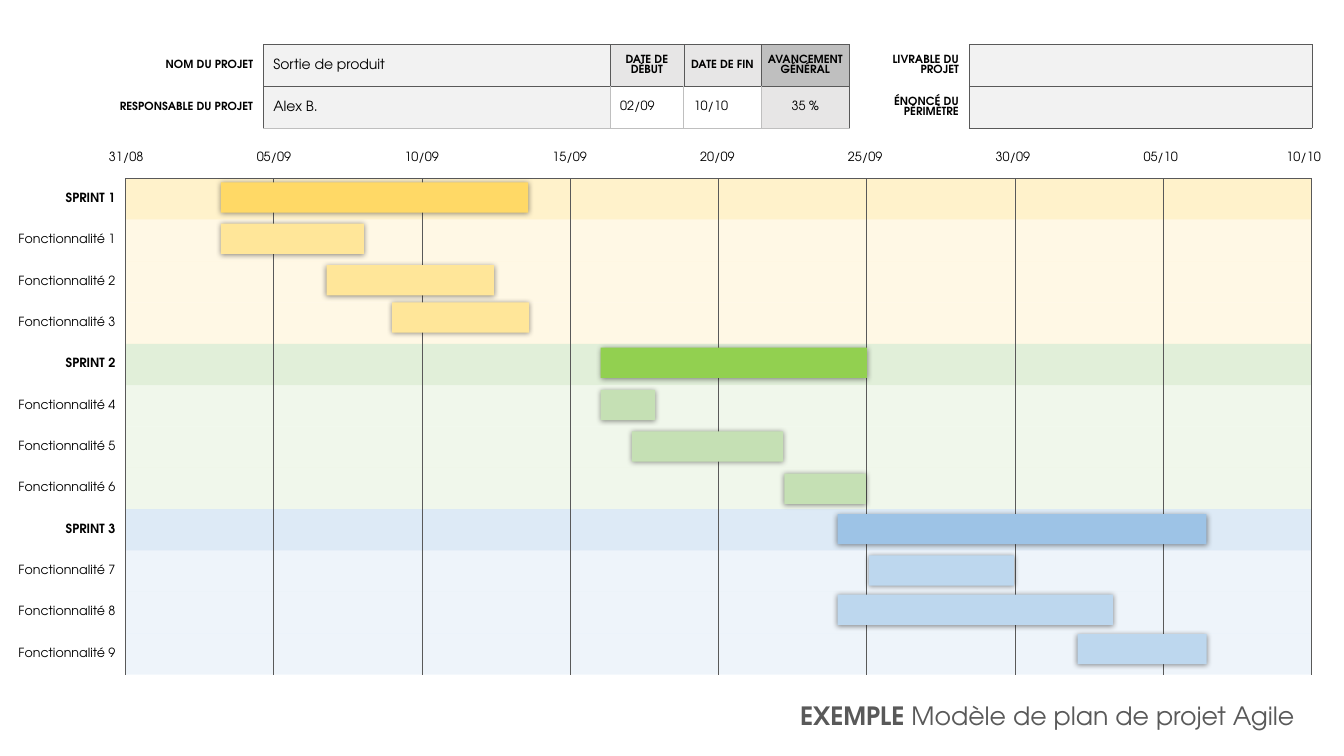
"""Build a one-slide Agile project plan with a Gantt grid."""
from lxml import etree
from pptx import Presentation
from pptx import util as u
from pptx.dml.color import RGBColor
from pptx.enum import shapes, text
from pptx.oxml.ns import qn

THEME = {
    "font": "TeX Gyre Adventor",
    "ink": "000000", "title": "595959", "dark": "595959", "light": "BFBFBF",
    "field": "F2F2F2", "heading": "E7E6E6", "progress": "BFBFBF", "white": "FFFFFF",
    "title_size": 18, "value_size": 10, "body_size": 9, "label_size": 8,
    "thin": 0.25, "medium": 0.5,
    "plain_table": "{2D5ABB26-0587-4C30-8999-92F81FD0307C}",
}
LEFT, CENTER, RIGHT = text.PP_ALIGN.LEFT, text.PP_ALIGN.CENTER, text.PP_ALIGN.RIGHT

TITLE = [("EXEMPLE", True), (" Modèle de plan de projet Agile ", False)]
DATES = ["31/08", "05/09", "10/09", "15/09", "20/09", "25/09", "30/09", "05/10", "10/10"]

# Each sprint: band, task band, bar, task bar, then rows of label, left, top, width.
SPRINTS = [
    ("FFE699", "FFF2CC", "FFD966", "FFE699", [
        ("SPRINT 1", 157.7, 130.3, 219.6),
        ("Fonctionnalité 1", 157.7, 159.8, 102.2),
        ("Fonctionnalité 2", 233.3, 189.4, 119.5),
        ("Fonctionnalité 3", 280.1, 216, 97.9)]),
    ("C5E0B4", "E2F0D9", "92D050", "C5E0B4", [
        ("SPRINT 2", 429.1, 248.4, 190.1),
        ("Fonctionnalité 4", 429.1, 278.6, 38.9),
        ("Fonctionnalité 5", 451.4, 308.2, 108),
        ("Fonctionnalité 6", 560.2, 338.4, 58.3)]),
    ("BDD7EE", "DEEBF7", "9DC3E6", "BDD7EE", [
        ("SPRINT 3", 598.3, 367.2, 263.5),
        ("Fonctionnalité 7", 620.6, 396.7, 103.7),
        ("Fonctionnalité 8", 598.3, 424.8, 196.6),
        ("Fonctionnalité 9", 769.7, 452.9, 92.2)]),
]

# Each cell: wording, size key, alignment, fill key, edges (left, right, top, bottom).
HEADER = [
    [("NOM DU PROJET", "label_size", RIGHT, None, "-d--"),
     ("Sortie de produit", "value_size", LEFT, "field", "dddd"),
     ("DATE DE DÉBUT", "label_size", CENTER, "heading", "dddd"),
     ("DATE DE FIN", "label_size", CENTER, "heading", "dddd"),
     ("AVANCEMENT GÉNÉRAL", "label_size", CENTER, "progress", "dddd"),
     ("LIVRABLE DU PROJET", "label_size", RIGHT, None, "dd--"),
     ("", "body_size", LEFT, "field", "dddd")],
    [("RESPONSABLE DU PROJET", "label_size", RIGHT, None, "-d--"),
     ("Alex B.", "value_size", LEFT, "field", "dldl"),
     ("02/09", "body_size", LEFT, "white", "lldl"),
     ("10/10", "body_size", LEFT, "white", "lldl"),
     ("35 %", "body_size", CENTER, "heading", "lddl"),
     ("ÉNONCÉ DU PÉRIMÈTRE", "label_size", RIGHT, None, "dd--"),
     ("", "body_size", LEFT, "field", "dddd")],
]
HEADER_COLUMNS = [130.3, 247.7, 52.6, 55.4, 63, 85.4, 244.8]
HEADER_ROWS = [30.2, 29.5]
GRID_LEFT, GRID_TOP, ROW_HEIGHT = 3.6, 127.4, 29.54
LABEL_WIDTH, PERIOD_WIDTH = 86, 105.9
BAR_HEIGHT = 21.6


def add_run(paragraph, wording, size, color, bold=False):
    run = paragraph.add_run()
    run.text = wording
    run.font.name = THEME["font"]
    run.font.size = u.Pt(size)
    run.font.bold = bold
    run.font.color.rgb = RGBColor.from_string(color)


def add_text(slide, box, runs, size, color, alignment):
    frame = slide.shapes.add_textbox(*map(u.Pt, box)).text_frame
    frame.word_wrap = True
    paragraph = frame.paragraphs[0]
    paragraph.alignment = alignment
    for wording, bold in runs:
        add_run(paragraph, wording, size, color, bold)


def add_table(slide, left, top, columns, rows):
    frame = slide.shapes.add_table(len(rows), len(columns), u.Pt(left), u.Pt(top),
                                   u.Pt(sum(columns)), u.Pt(sum(rows)))
    table = frame.table
    table.first_row = table.horz_banding = False
    next(frame._element.iter(qn("a:tableStyleId"))).text = THEME["plain_table"]
    for column, width in zip(table.columns, columns):
        column.width = u.Pt(width)
    for row, height in zip(table.rows, rows):
        row.height = u.Pt(height)
    return table


def set_alpha(parent, percent):
    etree.SubElement(parent, qn("a:alpha"), val=str(percent * 1000))


def style_cell(cell, edges, fill=None, alpha=None):
    properties = cell._tc.get_or_add_tcPr()
    for side, edge in zip("LRTB", edges):
        if edge == "-":
            continue
        color, width = ("dark", "thin") if edge == "d" else ("light", "medium")
        line = etree.SubElement(properties, qn(f"a:ln{side}"), w=str(u.Pt(THEME[width])))
        solid = etree.SubElement(line, qn("a:solidFill"))
        etree.SubElement(solid, qn("a:srgbClr"), val=THEME[color])
    if fill:
        cell.fill.solid()
        cell.fill.fore_color.rgb = RGBColor.from_string(fill)
    else:
        cell.fill.background()
    if alpha:
        set_alpha(next(properties.find(qn("a:solidFill")).iter(qn("a:srgbClr"))), alpha)


def write_cell(cell, wording, size, alignment, bold):
    cell.vertical_anchor = text.MSO_ANCHOR.MIDDLE
    paragraph = cell.text_frame.paragraphs[0]
    paragraph.alignment = alignment
    if wording:
        add_run(paragraph, wording, size, THEME["ink"], bold)


def add_bar(slide, left, top, width, color):
    box = map(u.Pt, (left, top, width, BAR_HEIGHT))
    bar = slide.shapes.add_shape(shapes.MSO_SHAPE.RECTANGLE, *box)
    bar.fill.solid()
    bar.fill.fore_color.rgb = RGBColor.from_string(color)
    bar.line.fill.background()
    bar.shadow.inherit = False
    effects = bar._element.spPr.find(qn("a:effectLst"))
    shadow = etree.SubElement(effects, qn("a:outerShdw"), blurRad=str(u.Pt(4)),
                              dist=str(u.Pt(0.5)), dir="5400000", rotWithShape="0")
    set_alpha(etree.SubElement(shadow, qn("a:srgbClr"), val=THEME["ink"]), 43)


def add_grid(slide):
    row_count = sum(len(sprint[-1]) for sprint in SPRINTS)
    columns = [LABEL_WIDTH] + [PERIOD_WIDTH] * (len(DATES) - 1)
    table = add_table(slide, GRID_LEFT, GRID_TOP, columns, [ROW_HEIGHT] * row_count)
    row = 0
    for band, task_band, _, _, tasks in SPRINTS:
        for position, (label, *_) in enumerate(tasks):
            is_sprint = position == 0
            style_cell(table.cell(row, 0), "-d--")
            write_cell(table.cell(row, 0), label, THEME["body_size"], RIGHT, is_sprint)
            for column in range(1, len(columns)):
                style_cell(table.cell(row, column), "dd--" if row else "ddd-",
                           band if is_sprint else task_band, 50)
            row += 1


def add_header(slide):
    table = add_table(slide, 57.8, 31.7, HEADER_COLUMNS, HEADER_ROWS)
    for row, cells in enumerate(HEADER):
        for column, (wording, size, alignment, fill, edges) in enumerate(cells):
            cell = table.cell(row, column)
            is_label = size == "label_size"
            style_cell(cell, edges, THEME[fill] if fill else None)
            write_cell(cell, wording, THEME[size], alignment, is_label)
            if is_label and alignment == CENTER:
                cell.margin_left = cell.margin_right = u.Pt(2.9)


def main():
    presentation = Presentation()
    presentation.slide_width, presentation.slide_height = u.Pt(960), u.Pt(540)
    slide = presentation.slides.add_slide(presentation.slide_layouts[6])
    add_text(slide, (419, 496.8, 517.7, 28.8), TITLE, THEME["title_size"], THEME["title"], RIGHT)
    add_grid(slide)
    for index, date in enumerate(DATES):
        left = min(67.8 + 105.57 * index, 908.9)
        add_text(slide, (left, 102.6, 44.6, 18), [(date, False)], THEME["body_size"],
                 THEME["ink"], CENTER)
    for _, _, sprint_color, task_color, tasks in SPRINTS:
        for position, (_, left, top, width) in enumerate(tasks):
            add_bar(slide, left, top, width, task_color if position else sprint_color)
    add_header(slide)
    presentation.save("out.pptx")


if __name__ == "__main__":
    main()
